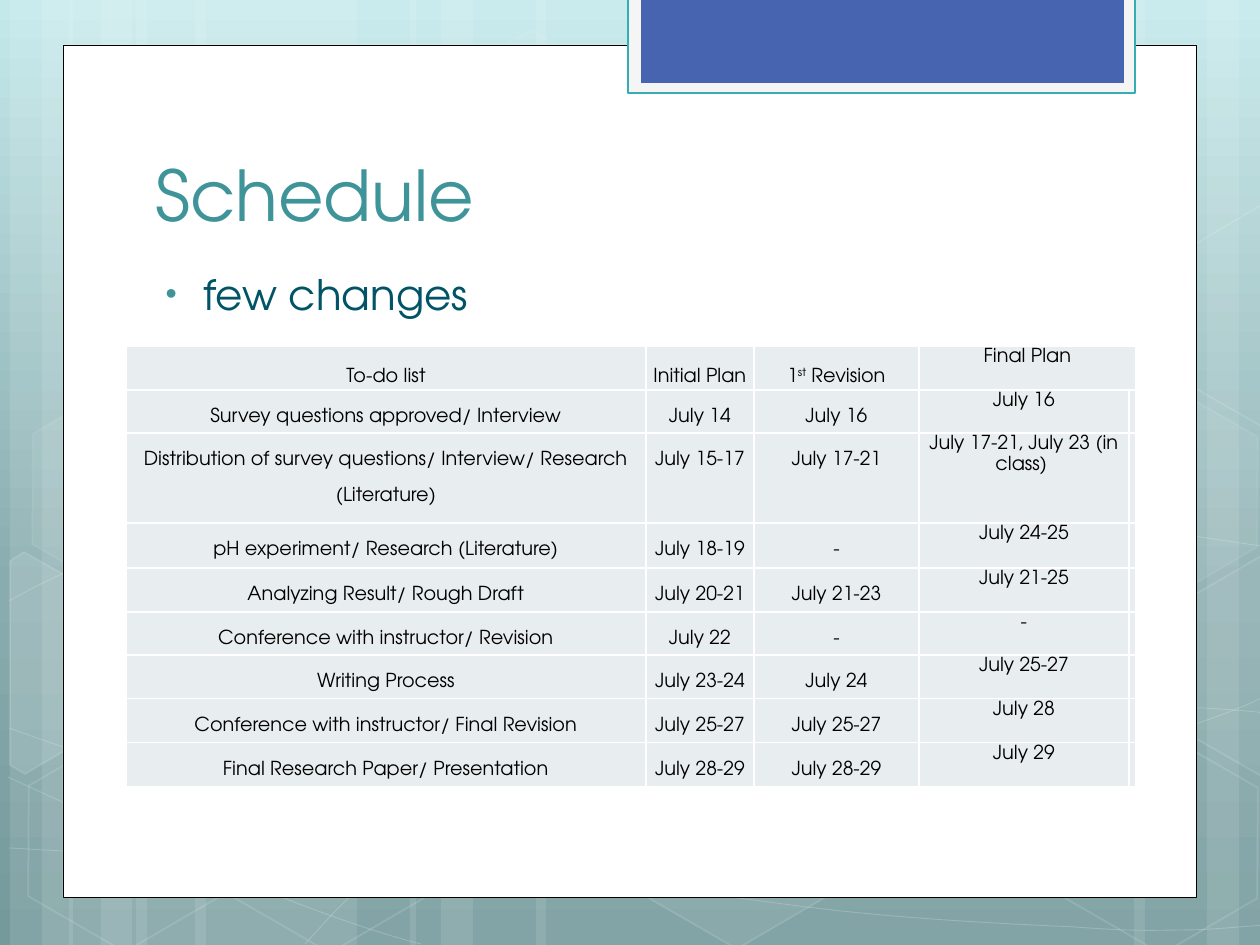
import dataclasses

import lxml.etree
import pptx
import pptx.dml.color
import pptx.enum.shapes
import pptx.enum.text
import pptx.oxml.ns
import pptx.util

PX = 914400 / 126
SHAPE = pptx.enum.shapes.MSO_SHAPE
ALIGN = pptx.enum.text.PP_ALIGN
ANCHOR = pptx.enum.text.MSO_ANCHOR
qn = pptx.oxml.ns.qn


@dataclasses.dataclass(frozen=True)
class Theme:
    font: str = "TeX Gyre Adventor"
    white: str = "FFFFFF"
    black: str = "000000"
    title: str = "3F949A"
    body: str = "005466"
    tab_frame: str = "F5F5F5"
    tab_line: str = "34AEB3"
    tab: str = "4764B0"
    cell: str = "E8EEEF"
    backdrop: tuple = ((0, "C4E9EB"), (62, "89ACAE"), (100, "759A9C"))
    title_size: int = 40
    body_size: int = 24
    table_size: int = 11


THEME = Theme()

BANDS = [(136, 221), (10, 63), (42, 105), (195, 221), (69, 63), (101, 105),
         (924, 221), (1207, 63), (1134, 105), (536, 388), (410, 63), (441, 105)]
CURVES = [
    [(9, 848), (77, 852), (145, 856), (239, 854), (334, 853), (451, 851), (577, 838),
     (703, 825), (882, 801), (998, 777), (1113, 753), (1231, 716), (1269, 694)],
    [(9, 601), (45, 581), (82, 562), (152, 543), (224, 524), (326, 496), (437, 488),
     (549, 479), (685, 478), (824, 488), (963, 498), (1193, 537), (1269, 547)],
    [(8, 777), (160, 847), (311, 916), (421, 944)],
    [(9, 728), (48, 742), (88, 756), (161, 776), (234, 795), (344, 827), (450, 848),
     (554, 869), (687, 892), (791, 905), (896, 919), (1008, 924), (1075, 927),
     (1140, 932), (1158, 930), (1191, 930), (1223, 929), (1246, 926), (1269, 925)],
    [(305, 944), (328, 919), (350, 893), (381, 871), (411, 848), (454, 823), (489, 805),
     (524, 787), (546, 780), (592, 767), (638, 755), (722, 737), (766, 728),
     (811, 719), (818, 719), (857, 717), (896, 713), (958, 709), (1000, 708),
     (1045, 707), (1116, 708), (1116, 708), (1144, 708), (1173, 708), (1201, 708),
     (1223, 709), (1245, 711), (1256, 712), (1264, 713), (1264, 713), (1268, 713)],
]
HEXAGONS = [(421, 45, 4, 8), (626, 742, 6, 12), (14, 745, 0, 12), (18, 393, 7, 8),
            (219, 746, 0, 12), (949, 571, 10, 12), (1051, 747, 0, 12), (1051, 396, 7, 8)]
CUT_HEXAGONS = [
    ([(10, 561), (24, 552), (121, 607), (120, 718), (25, 774), (10, 765)], 10),
    ([(1167, 611), (1261, 556), (1271, 562), (1271, 772), (1263, 777), (1167, 722)], 4),
    ([(1167, 261), (1261, 205), (1273, 212), (1271, 422), (1263, 427), (1167, 372)], 0),
]

COLUMNS = [520, 108, 165, 210, 5]
ROWS = [44, 43, 90, 45, 44, 43, 44, 44, 44]
SCHEDULE = [
    ("To-do list", "Initial Plan", "1^st^ Revision", "Final Plan"),
    ("Survey questions approved/ Interview", "July 14", "July 16", "July 16"),
    ("Distribution of survey questions/ Interview/ Research (Literature)",
     "July 15-17", "July 17-21", "July 17-21, July 23 (in class) "),
    ("pH experiment/ Research (Literature)", "July 18-19", "-", "July 24-25"),
    ("Analyzing Result/ Rough Draft", "July 20-21", "July 21-23", "July 21-25"),
    ("Conference with instructor/ Revision", "July 22", "-", "-"),
    ("Writing Process", "July 23-24", "July 24", "July 25-27"),
    ("Conference with instructor/ Final Revision", "July 25-27", "July 25-27", "July 28"),
    ("Final Research Paper/ Presentation", "July 28-29", "July 28-29", "July 29"),
]


def px(length):
    return round(length * PX)


def rgb(color):
    return pptx.dml.color.RGBColor.from_string(color)


def add_xml(parent, tag, **attributes):
    return lxml.etree.SubElement(parent, qn(tag), attributes)


def write(paragraph, text, size, color, align=ALIGN.LEFT, spacing=None):
    paragraph.alignment = align
    if spacing:
        paragraph.line_spacing = spacing
    for index, part in enumerate(text.split("^")):
        run = paragraph.add_run()
        run.text = part
        run.font.name = THEME.font
        run.font.size = pptx.util.Pt(size)
        run.font.color.rgb = rgb(color)
        if index % 2:
            run.font._element.set("baseline", "30000")


def paint(shape, fill=None, line=None, width=1, fill_alpha=100, line_alpha=100):
    shape.shadow.inherit = False
    if fill and fill_alpha:
        shape.fill.solid()
        shape.fill.fore_color.rgb = rgb(fill)
    else:
        shape.fill.background()
    if line:
        shape.line.color.rgb = rgb(line)
        shape.line.width = pptx.util.Pt(width)
    else:
        shape.line.fill.background()
    for query, alpha in (("a:solidFill/a:srgbClr", fill_alpha),
                         ("a:ln/a:solidFill/a:srgbClr", line_alpha)):
        for color in shape.element.spPr.xpath(query):
            if alpha < 100:
                add_xml(color, "a:alpha", val=str(alpha * 1000))


def add_preset(slide, kind, box, **look):
    shape = slide.shapes.add_shape(kind, *map(px, box))
    paint(shape, **look)
    return shape


def add_outline(slide, points, close, **look):
    start, *rest = [(px(x), px(y)) for x, y in points]
    builder = slide.shapes.build_freeform(*start)
    builder.add_line_segments(rest, close=close)
    outline = builder.convert_to_shape()
    paint(outline, **look)
    return outline


def bend(outline):
    legs = outline.element.xpath(".//a:lnTo")
    for first in range(0, len(legs), 3):
        curve = lxml.etree.Element(qn("a:cubicBezTo"))
        legs[first].addprevious(curve)
        for leg in legs[first:first + 3]:
            curve.append(leg[0])
            leg.getparent().remove(leg)


def add_backdrop(slide):
    gradient = slide.background.fill
    gradient.gradient()
    gradient.gradient_angle = 270
    stops = slide.element.xpath(".//p:bg//a:gsLst")[0]
    for stop in list(stops):
        stops.remove(stop)
    for position, color in THEME.backdrop:
        add_xml(add_xml(stops, "a:gs", pos=str(position * 1000)), "a:srgbClr", val=color)

    for left, width in BANDS:
        add_preset(slide, SHAPE.RECTANGLE, (left, 0, width, 945),
                   fill=THEME.white, fill_alpha=10)
    for knots in CURVES:
        bend(add_outline(slide, knots, False, line=THEME.white, width=0.5, line_alpha=20))
    for left, top, fill_alpha, line_alpha in HEXAGONS:
        hexagon = add_preset(slide, SHAPE.HEXAGON, (left, top, 221, 192), fill=THEME.white,
                             line=THEME.white, fill_alpha=fill_alpha, line_alpha=line_alpha)
        hexagon.adjustments[0] = 0.285
        hexagon.rotation = 30
    for corners, fill_alpha in CUT_HEXAGONS:
        add_outline(slide, corners, True, fill=THEME.white, line=THEME.white,
                    fill_alpha=fill_alpha, line_alpha=12)


def add_panel(slide):
    add_preset(slide, SHAPE.RECTANGLE, (63, 45, 1134, 853),
               fill=THEME.white, line=THEME.black, width=0.5)
    add_preset(slide, SHAPE.RECTANGLE, (628, -3, 507, 96),
               fill=THEME.tab_frame, line=THEME.tab_line, width=1.25)
    add_preset(slide, SHAPE.RECTANGLE, (641, -3, 483, 86), fill=THEME.tab)


def place(slide, holder, box, anchor):
    slide.shapes.element.append(holder.element)
    holder.left, holder.top, holder.width, holder.height = map(px, box)
    holder.text_frame.vertical_anchor = anchor
    return holder.text_frame.paragraphs[0]


def add_heading(slide):
    heading = place(slide, slide.shapes.title, (143, 142, 968, 100), ANCHOR.BOTTOM)
    write(heading, "Schedule", THEME.title_size, THEME.title)

    remark = place(slide, slide.placeholders[1], (143, 262, 934, 542), ANCHOR.TOP)
    write(remark, "few changes", THEME.body_size, THEME.body)
    layout = remark._p.get_or_add_pPr()
    layout.set("marL", str(px(48)))
    layout.set("indent", str(px(-38)))
    add_xml(add_xml(layout, "a:buClr"), "a:srgbClr", val=THEME.title)
    add_xml(layout, "a:buSzPct", val="76000")
    add_xml(layout, "a:buChar", char="•")


def format_cell(cell):
    cell.margin_left = cell.margin_right = px(1)
    cell.margin_top = cell.margin_bottom = 0
    borders = cell._tc.get_or_add_tcPr()
    for side in ("a:lnL", "a:lnR", "a:lnT", "a:lnB"):
        edge = add_xml(borders, side, w=str(pptx.util.Pt(1)))
        add_xml(add_xml(edge, "a:solidFill"), "a:srgbClr", val=THEME.white)
    cell.fill.solid()
    cell.fill.fore_color.rgb = rgb(THEME.cell)


def add_schedule(slide):
    box = (126, 346, sum(COLUMNS), sum(ROWS))
    schedule = slide.shapes.add_table(len(ROWS), len(COLUMNS), *map(px, box)).table
    schedule.first_row = schedule.horz_banding = False
    for column, width in zip(schedule.columns, COLUMNS):
        column.width = px(width)
    for row, height in zip(schedule.rows, ROWS):
        row.height = px(height)
    for cell in schedule.iter_cells():
        format_cell(cell)
    for row, entries in enumerate(SCHEDULE):
        for column, entry in enumerate(entries):
            cell = schedule.cell(row, column)
            final = column == 3
            if row == 0 and not final:
                cell.vertical_anchor = ANCHOR.MIDDLE
            write(cell.text_frame.paragraphs[0], entry, THEME.table_size, THEME.black,
                  align=ALIGN.CENTER, spacing=1.15 if final else 2.0)
    schedule.cell(0, 3).merge(schedule.cell(0, 4))


def main():
    deck = pptx.Presentation()
    deck.slide_width, deck.slide_height = px(1260), px(945)
    slide = deck.slides.add_slide(deck.slide_layouts[1])
    add_backdrop(slide)
    add_panel(slide)
    add_heading(slide)
    add_schedule(slide)
    deck.save("out.pptx")


if __name__ == "__main__":
    main()
